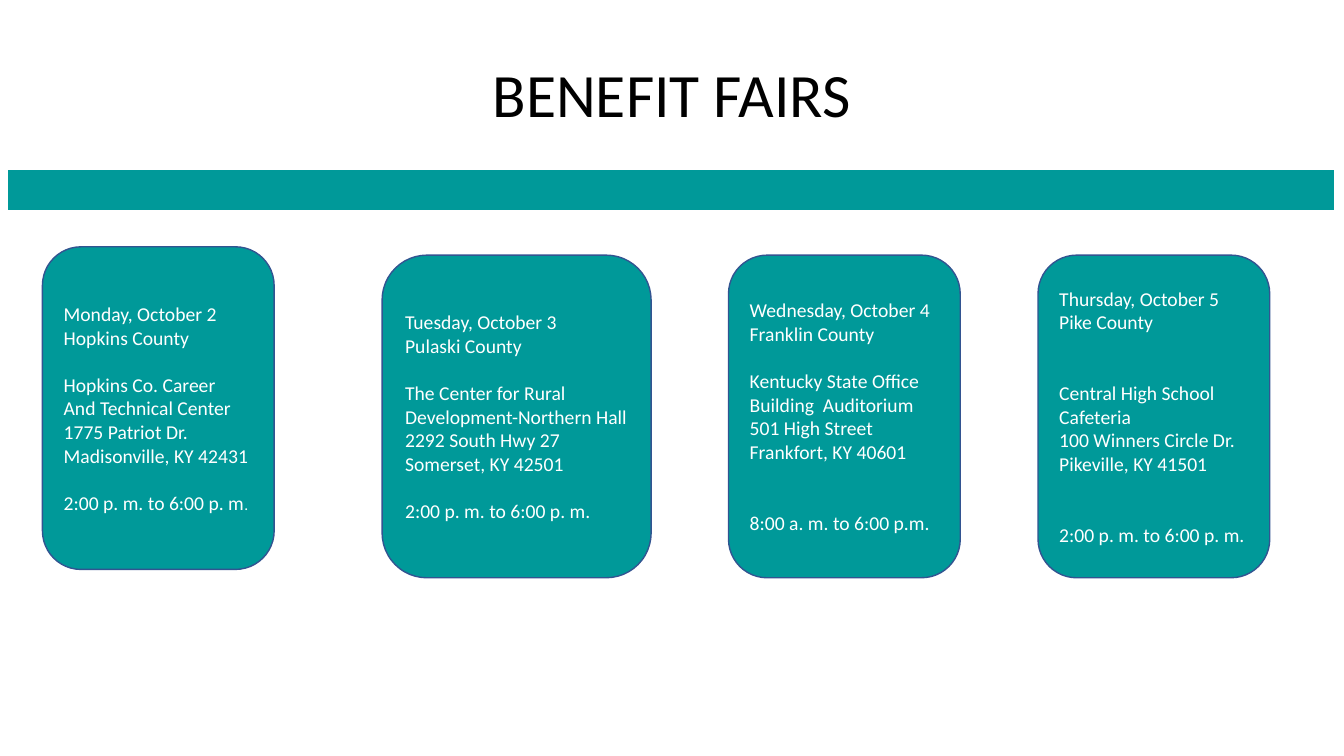
from pptx import Presentation
from pptx.dml.color import RGBColor
from pptx.enum.shapes import MSO_SHAPE
from pptx.enum.text import MSO_ANCHOR, PP_ALIGN
from pptx.util import Cm, Pt

TEAL = RGBColor(0x00, 0x99, 0x99)
OUTLINE = RGBColor(0x32, 0x54, 0x91)
WHITE = RGBColor(0xFF, 0xFF, 0xFF)
BLACK = RGBColor(0x00, 0x00, 0x00)

HEADING = "BENEFIT FAIRS"
FAIRS = [
    {"left": 1.07, "top": 6.22, "width": 5.84, "gaps": (0, 1, 1), "groups": [
        ["Monday, October 2", "Hopkins County"],
        ["Hopkins Co. Career", "And Technical Center", "1775 Patriot Dr.",
         "Madisonville, KY 42431"],
        ["2:00 p. m. to 6:00 p. m"]], "small_ending": "."},
    {"left": 9.63, "top": 6.43, "width": 6.78, "gaps": (0, 1, 1), "groups": [
        ["Tuesday, October 3", "Pulaski County"],
        ["The Center for Rural Development-Northern Hall",
         "2292 South Hwy 27", "Somerset, KY 42501"],
        ["2:00 p. m. to 6:00 p. m."]]},
    {"left": 18.36, "top": 6.43, "width": 5.84, "gaps": (0, 1, 2), "groups": [
        ["Wednesday, October 4", "Franklin County"],
        ["Kentucky State Office Building  Auditorium", "501 High Street",
         "Frankfort, KY 40601"],
        ["8:00 a. m. to 6:00 p.m."]]},
    {"left": 26.16, "top": 6.43, "width": 5.84, "gaps": (0, 2, 2), "groups": [
        ["Thursday, October 5", "Pike County"],
        ["Central High School", "Cafeteria", "100 Winners Circle Dr.",
         "Pikeville, KY 41501"],
        ["2:00 p. m. to 6:00 p. m."]]},
]
CARD_HEIGHT = 8.13
LINE_HEIGHT = 17
HEADING_FONT = {"name": "Calibri", "size": Pt(44)}
FAIR_FONT = {"name": "Calibri", "size": Pt(14)}


def set_font(font, values, color):
    for attribute, value in values.items():
        setattr(font, attribute, value)
    font.color.rgb = color


def add_fair(slide, fair):
    card = slide.shapes.add_shape(
        MSO_SHAPE.ROUNDED_RECTANGLE, Cm(fair["left"]), Cm(fair["top"]),
        Cm(fair["width"]), Cm(CARD_HEIGHT))
    card.shadow.inherit = False
    card.fill.solid()
    card.fill.fore_color.rgb = TEAL
    card.line.color.rgb = OUTLINE
    card.line.width = Pt(1)
    details = card.text_frame
    details.word_wrap = True
    details.vertical_anchor = MSO_ANCHOR.MIDDLE
    line = details.paragraphs[0]
    for gap, group in zip(fair["gaps"], fair["groups"]):
        for position, wording in enumerate(group):
            if line.runs:
                line = details.add_paragraph()
            line.alignment = PP_ALIGN.LEFT
            if gap and position == 0:
                line.space_before = Pt(gap * LINE_HEIGHT)
            set_font(line.font, FAIR_FONT, WHITE)
            line.add_run().text = wording
    if "small_ending" in fair:
        ending = line.add_run()
        ending.text = fair["small_ending"]
        ending.font.size = Pt(11)


def main():
    deck = Presentation()
    deck.slide_width, deck.slide_height = Cm(33.87), Cm(19.05)
    slide = deck.slides.add_slide(deck.slide_layouts[5])

    title = slide.shapes.title
    title.left, title.top = Cm(2.33), Cm(1.01)
    title.width, title.height = Cm(29.21), Cm(2.92)
    title.text_frame.text = HEADING
    title.text_frame.vertical_anchor = MSO_ANCHOR.MIDDLE
    heading = title.text_frame.paragraphs[0]
    heading.alignment = PP_ALIGN.CENTER
    heading.line_spacing = 0.9
    set_font(heading.font, HEADING_FONT, BLACK)

    for fair in FAIRS:
        add_fair(slide, fair)

    band = slide.shapes.add_table(
        1, 1, Cm(0.18), Cm(4.27), Cm(33.45), Cm(1.02)).table
    band.first_row = band.horz_banding = False
    band.cell(0, 0).fill.solid()
    band.cell(0, 0).fill.fore_color.rgb = TEAL

    deck.save("out.pptx")


if __name__ == "__main__":
    main()
